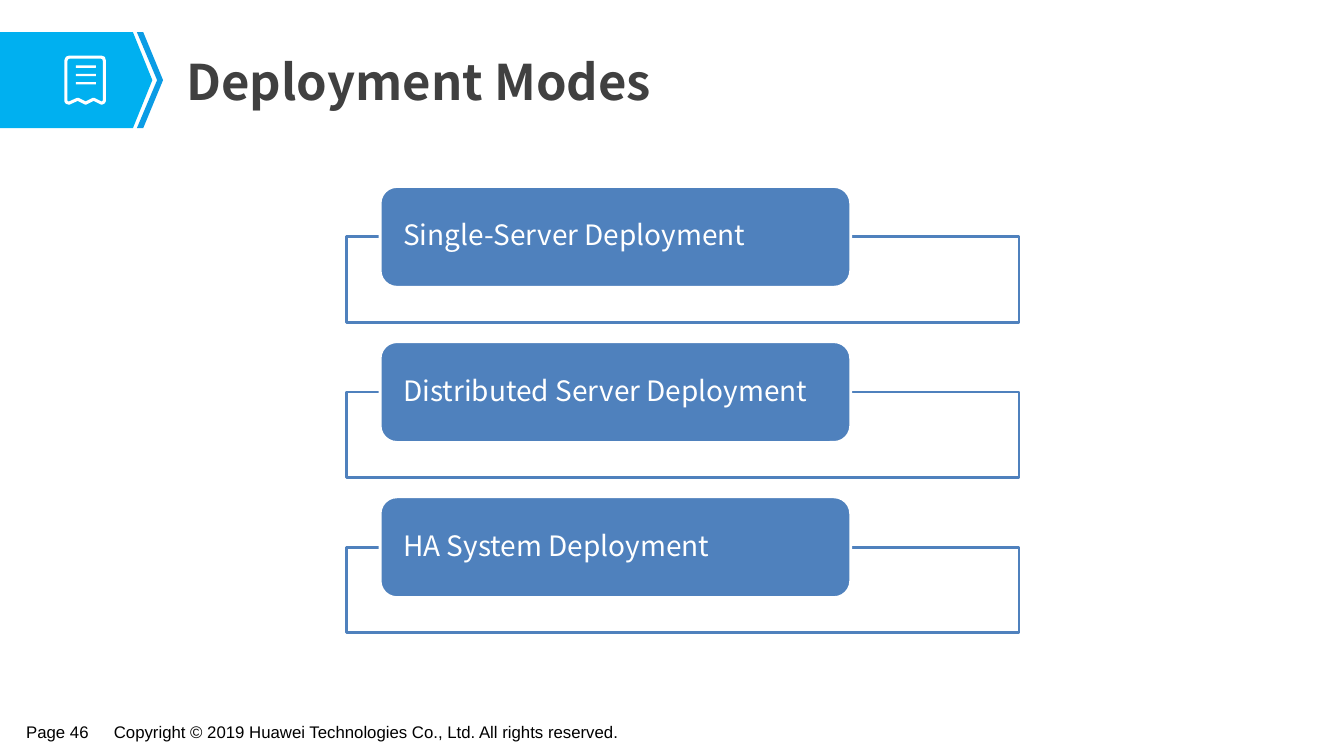
from lxml import etree
from pptx import Presentation
from pptx import util as u
from pptx.dml.color import RGBColor
from pptx.enum import shapes, text
from pptx.oxml.ns import qn

MODES = ["Single-Server Deployment", "Distributed Server Deployment", "HA System Deployment"]
TITLE = ("Deployment Modes", (4.42, 1.14, 27.31, 1.78))
FOOTERS = [
    ("Page 46", (0.43, 18.06, 2.08, 0.74)),
    ("Copyright © 2019 Huawei Technologies Co., Ltd. All rights reserved.",
     (2.64, 18.06, 13.39, 0.74)),
]
BANNER = [
    ("00B0F0", [(3.35, 3.23), (0, 3.23), (0, 0.81), (3.35, 0.81), (3.84, 2.02)]),
    ("0B9CE5", [(3.61, 0.81), (3.45, 0.81), (3.96, 2.02), (3.45, 3.23), (3.61, 3.23), (4.11, 2.02)]),
]
RECEIPT = [(1.66, 1.53), (1.69, 1.46), (1.75, 1.44), (2.55, 1.44), (2.61, 1.46), (2.63, 1.53),
           (2.63, 2.54), (2.61, 2.58), (2.56, 2.6), (2.36, 2.5), (2.16, 2.6), (1.96, 2.5),
           (1.74, 2.6), (1.68, 2.58), (1.66, 2.54)]
RECEIPT_ROW, RECEIPT_STEP, RECEIPT_ROWS = (1.91, 1.65, 0.51, 0.06), 0.21, 3
FRAME, LABEL, MODE_STEP = (8.74, 5.97, 16.94, 2.16), (9.58, 4.7, 11.86, 2.54), 3.91
WHITE, BLUE = "FFFFFF", "4F81BD"

TITLE_FONT = {"name": "Noto Sans CJK SC", "size": u.Pt(35), "bold": True}
MODE_FONT = {"name": "Noto Sans CJK SC", "size": u.Pt(20), "bold": False}
FOOTER_FONT = {"name": "Arial", "size": u.Pt(12), "bold": False}
MODE_SPACING = {"line_spacing": 0.9, "space_after": u.Pt(7), "alignment": text.PP_ALIGN.LEFT}


def apply(target, values):
    for name, value in values.items():
        setattr(target, name, value)


def color(part, code):
    part.rgb = RGBColor.from_string(code)


def paint(shape, fill=None, line=None, width=2):
    shape.shadow.inherit = False
    if fill:
        shape.fill.solid()
        color(shape.fill.fore_color, fill)
    else:
        shape.fill.background()
    if line:
        color(shape.line.color, line)
        shape.line.width = u.Pt(width)
    else:
        shape.line.fill.background()


def lengths(box):
    return [u.Cm(value) for value in box]


def shifted(box, distance):
    left, top, width, height = box
    return left, top + distance, width, height


def add_preset(slide, kind, box, **look):
    shape = slide.shapes.add_shape(kind, *lengths(box))
    paint(shape, **look)
    return shape


def add_outline(slide, points, **look):
    start, *rest = [lengths(point) for point in points]
    outline = slide.shapes.build_freeform(*start)
    outline.add_line_segments(rest, close=True)
    paint(outline.convert_to_shape(), **look)


def write(shape, words, font, ink, inset, wrap=True, spacing=None):
    frame = shape.text_frame
    side, edge = lengths(inset)
    apply(frame, {"word_wrap": wrap, "vertical_anchor": text.MSO_ANCHOR.MIDDLE,
                  "margin_left": side, "margin_right": side,
                  "margin_top": edge, "margin_bottom": edge})
    paragraph = frame.paragraphs[0]
    apply(paragraph, spacing or {})
    run = paragraph.add_run()
    run.text = words
    apply(run.font, font)
    color(run.font.color, ink)


def add_banner(slide):
    for fill, points in BANNER:
        add_outline(slide, points, fill=fill)
    add_outline(slide, RECEIPT, line=WHITE, width=2.2)
    for index in range(RECEIPT_ROWS):
        add_preset(slide, shapes.MSO_SHAPE.ROUNDED_RECTANGLE,
                   shifted(RECEIPT_ROW, index * RECEIPT_STEP), fill=WHITE)


def add_mode(slide, words, distance):
    frame = add_preset(slide, shapes.MSO_SHAPE.RECTANGLE, shifted(FRAME, distance),
                       fill=WHITE, line=BLUE)
    tint = frame.fill._xPr.find(qn("a:solidFill"))[0]
    etree.SubElement(tint, qn("a:alpha"), val="90000")
    label = add_preset(slide, shapes.MSO_SHAPE.ROUNDED_RECTANGLE, shifted(LABEL, distance),
                       fill=BLUE, line=WHITE)
    write(label, words, MODE_FONT, WHITE, (0.46, 0), spacing=MODE_SPACING)


def main():
    deck = Presentation()
    apply(deck, {"slide_width": u.Cm(33.87), "slide_height": u.Cm(19.05)})
    slide = deck.slides.add_slide(deck.slide_layouts[6])
    for words, box in FOOTERS:
        footer = slide.shapes.add_textbox(*lengths(box))
        write(footer, words, FOOTER_FONT, "000000", (0.23, 0.1), wrap=False)
    add_banner(slide)
    words, box = TITLE
    title = slide.shapes.add_textbox(*lengths(box))
    write(title, words, TITLE_FONT, "404040", (0.28, 0.15))
    for index, mode in enumerate(MODES):
        add_mode(slide, mode, index * MODE_STEP)
    deck.save("out.pptx")


if __name__ == "__main__":
    main()
